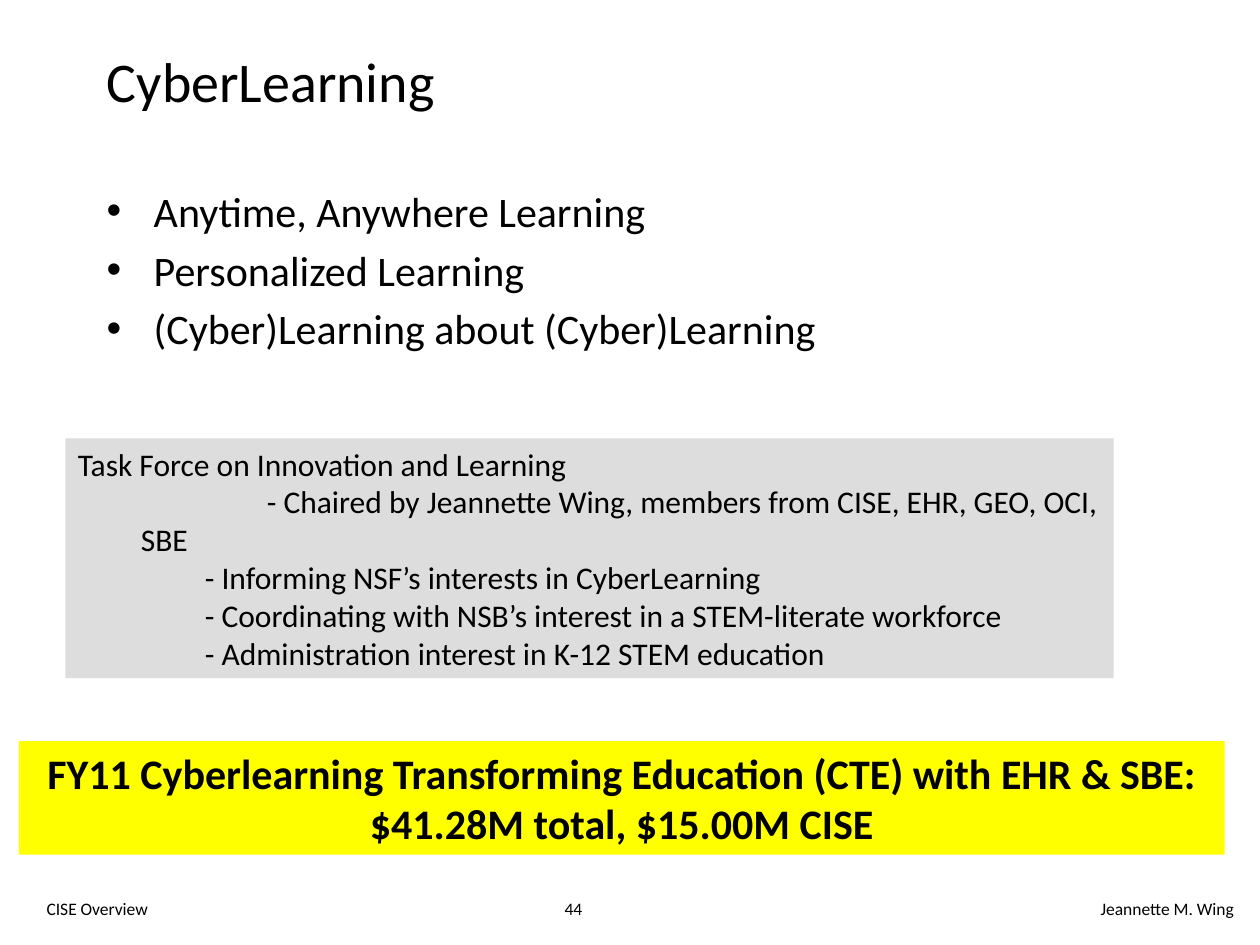
"""Build the CyberLearning slide."""
from lxml import etree
from pptx import Presentation, util as u
from pptx.dml.color import RGBColor
from pptx.enum import shapes, text
from pptx.oxml import ns

THEME = {
    "font": "Calibri",
    "ink": RGBColor.from_string("000000"),
    "gray": RGBColor.from_string("DDDDDD"),
    "yellow": RGBColor.from_string("FFFF00"),
    "title": 32,
    "body": 24,
    "task": 18,
    "foot": 10,
}
ALIGN = text.PP_ALIGN
ANCHOR = text.MSO_ANCHOR


def write(frame, line, size, bold=False, align=ALIGN.LEFT, left=0, first=0, before=0, bullet=None):
    para = frame.paragraphs[0]
    if para.runs:
        para = frame.add_paragraph()
    para.alignment = align
    para.space_before = u.Pt(before)
    props = para._p.get_or_add_pPr()
    props.set("marL", str(u.Cm(left)))
    props.set("indent", str(u.Cm(first)))
    if bullet:
        etree.SubElement(props, ns.qn("a:buFont")).set("typeface", "Arial")
        etree.SubElement(props, ns.qn("a:buChar")).set("char", bullet)
    run = para.add_run()
    run.text = line
    run.font.name = THEME["font"]
    run.font.size = u.Pt(THEME[size])
    run.font.bold = bold
    run.font.color.rgb = THEME["ink"]


def panel(area, fill=None):
    area = [u.Cm(n) for n in area]
    if fill:
        shape = slide.shapes.add_shape(shapes.MSO_SHAPE.RECTANGLE, *area)
        shape.shadow.inherit = False
        shape.fill.solid()
        shape.fill.fore_color.rgb = THEME[fill]
        shape.line.fill.background()
    else:
        shape = slide.shapes.add_textbox(*area)
    shape.text_frame.word_wrap = True
    return shape.text_frame


deck = Presentation()
deck.slide_width, deck.slide_height = u.Cm(25.4), u.Cm(19.05)
slide = deck.slides.add_slide(deck.slide_layouts[5])

for line, left, width, align in (
    ("44", 8.92, 5.28, ALIGN.CENTER),
    ("CISE Overview", 0.69, 5.28, ALIGN.LEFT),
    ("Jeannette M. Wing", 17.55, 7.57, ALIGN.RIGHT),
):
    write(panel((left, 17.98, width, 0.84)), line, "foot", align=align)

title = slide.shapes.title
title.left, title.top, title.width, title.height = [u.Cm(n) for n in (1.9, 0.66, 21.6, 1.9)]
title.text_frame.vertical_anchor = ANCHOR.MIDDLE
write(title.text_frame, "CyberLearning", "title")

body = panel((1.9, 3.61, 21.6, 13.77))
for line in (
    "Anytime, Anywhere Learning",
    "Personalized Learning",
    "(Cyber)Learning about (Cyber)Learning",
):
    write(body, line, "body", left=0.95, first=-0.95, before=4.8, bullet="•")

task = panel((1.32, 8.84, 21.13, 4.83), "gray")
task.vertical_anchor = ANCHOR.TOP
for line, left, first in (
    ("Task Force on Innovation and Learning", 0, 0),
    ("- Chaired by Jeannette Wing, members from CISE, EHR, GEO, OCI, SBE", 1.27, 2.54),
    ("- Informing NSF’s interests in CyberLearning", 2.56, 0),
    ("- Coordinating with NSB’s interest in a STEM-literate workforce", 2.56, 0),
    ("- Administration interest in K-12 STEM education", 2.56, 0),
):
    write(task, line, "task", left=left, first=first)

budget = panel((0.38, 14.94, 24.31, 2.29), "yellow")
budget.vertical_anchor = ANCHOR.TOP
write(
    budget,
    "FY11 Cyberlearning Transforming Education (CTE) with EHR & SBE: $41.28M total, $15.00M CISE",
    "body", bold=True, align=ALIGN.CENTER,
)

deck.save("out.pptx")
